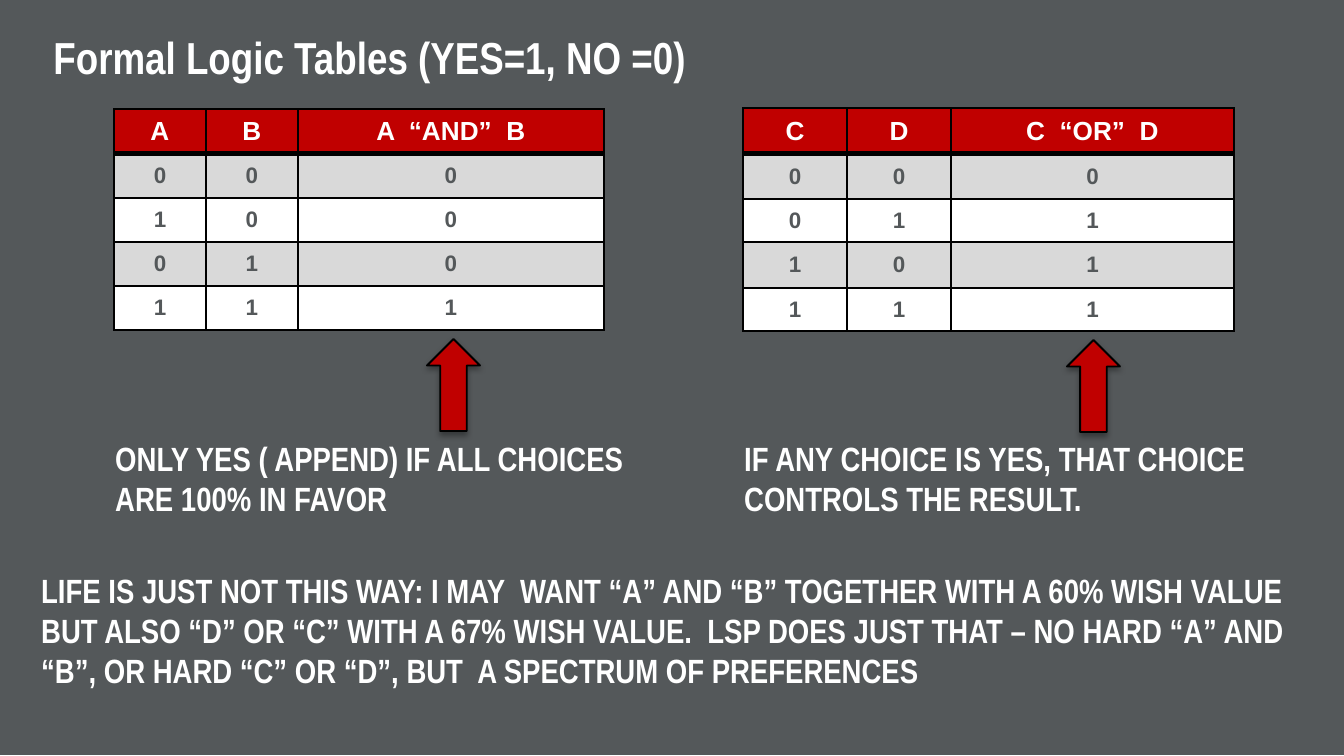
import pptx
import pptx.dml.color
import pptx.enum.shapes
import pptx.enum.text
import pptx.oxml
import pptx.oxml.ns
import pptx.util

RGB = pptx.dml.color.RGBColor
WHITE = RGB(0xFF, 0xFF, 0xFF)
BLACK = RGB(0x00, 0x00, 0x00)
SLATE = RGB(0x54, 0x58, 0x5A)
RED = RGB(0xC0, 0x00, 0x00)
GREY = RGB(0xD9, 0xD9, 0xD9)

PX = 914400 / 134.4
SHAPE = pptx.enum.shapes.MSO_SHAPE
ANCHOR = pptx.enum.text.MSO_ANCHOR
ALIGN = pptx.enum.text.PP_ALIGN
NS = pptx.oxml.ns.nsdecls("a")


def px(*lengths):
    """Turn pixel lengths into EMU."""
    return [pptx.util.Emu(round(length * PX)) for length in lengths]


def write(frame, text, size, font, color, align):
    frame.text = text
    paragraph = frame.paragraphs[0]
    paragraph.alignment = align
    look = {"size": pptx.util.Pt(size), "name": font, "bold": True}
    for attribute, value in look.items():
        setattr(paragraph.runs[0].font, attribute, value)
    paragraph.runs[0].font.color.rgb = color


deck = pptx.Presentation()
deck.slide_width, deck.slide_height = px(1344, 756)
slide = deck.slides.add_slide(deck.slide_layouts[5])
shapes = slide.shapes

title = shapes.title
title.left, title.top, title.width, title.height = px(40, 23, 667, 67)
write(title.text_frame, "Formal Logic Tables (YES=1, NO =0)", 24,
      "Arial Narrow", WHITE, ALIGN.LEFT)
title.text_frame.word_wrap = False
title.text_frame.vertical_anchor = ANCHOR.TOP
title.text_frame.auto_size = pptx.enum.text.MSO_AUTO_SIZE.NONE

backdrop = shapes.add_shape(SHAPE.RECTANGLE, *px(0, 0, 1344, 755))
backdrop.shadow.inherit = False
backdrop.fill.solid()
backdrop.fill.fore_color.rgb = SLATE
backdrop.line.fill.background()
title.element.addprevious(backdrop.element)

# Remarks: left, top, width, height, text
remarks = [
    (102, 431, 562, 95, "ONLY YES ( APPEND) IF ALL CHOICES ARE 100% IN FAVOR"),
    (731, 431, 538, 95,
     "IF ANY CHOICE IS YES, THAT CHOICE CONTROLS THE RESULT."),
    (28, 563, 1288, 136,
     "LIFE IS JUST NOT THIS WAY: I MAY  WANT “A” AND “B” TOGETHER WITH A 60% "
     "WISH VALUE  BUT ALSO “D” OR “C” WITH A 67% WISH VALUE.  LSP DOES JUST "
     "THAT – NO HARD “A” AND “B”, OR HARD “C” OR “D”, BUT  A SPECTRUM OF "
     "PREFERENCES"),
]
for *place, text in remarks:
    remark = shapes.add_textbox(*px(*place))
    remark.text_frame.word_wrap = True
    write(remark.text_frame, text, 18, "Arial Narrow", WHITE, ALIGN.LEFT)

# Truth tables: left, top, column widths, row heights, rows
truth_tables = [
    (114, 109, (92, 92, 306), (44, 44, 44, 44, 44),
     [("A", "B", "A  “AND”  B"), "000", "100", "010", "111"]),
    (743, 108, (104, 104, 283), (46, 45, 43, 46, 43),
     [("C", "D", "C  “OR”  D"), "000", "011", "101", "111"]),
]
for left, top, widths, heights, rows in truth_tables:
    table = shapes.add_table(
        len(rows), len(widths),
        *px(left, top, sum(widths), sum(heights))).table
    for column, width in zip(table.columns, px(*widths)):
        column.width = width
    for row, height in zip(table.rows, px(*heights)):
        row.height = height
    for r, values in enumerate(rows):
        header = r == 0
        for c, value in enumerate(values):
            cell = table.cell(r, c)
            write(cell.text_frame, value, 14 if header else 12, "Arial",
                  WHITE if header else SLATE, ALIGN.CENTER)
            cell.vertical_anchor = ANCHOR.MIDDLE
            borders = {"L": 1, "R": 1, "T": 3 if r == 1 else 1,
                       "B": 3 if header else 1}
            for side, points in borders.items():
                cell._tc.get_or_add_tcPr().append(pptx.oxml.parse_xml(
                    f'<a:ln{side} {NS} w="{points * 12700}"><a:solidFill>'
                    f'<a:srgbClr val="{BLACK}"/></a:solidFill></a:ln{side}>'))
            cell.fill.solid()
            cell.fill.fore_color.rgb = RED if header else (WHITE, GREY)[r % 2]

for left, top in [(427, 339), (1067, 340)]:
    arrow = shapes.add_shape(SHAPE.UP_ARROW, *px(left, top, 53, 92))
    arrow.fill.solid()
    arrow.fill.fore_color.rgb = RED
    arrow.line.color.rgb = BLACK
    arrow.line.width = pptx.util.Pt(1)
    arrow.shadow.inherit = False
    effects = arrow.element.spPr.find(pptx.oxml.ns.qn("a:effectLst"))
    effects.append(pptx.oxml.parse_xml(
        f'<a:outerShdw {NS} blurRad="39370" dist="22860" dir="5400000" '
        f'rotWithShape="0"><a:srgbClr val="{BLACK}"><a:alpha val="35000"/>'
        '</a:srgbClr></a:outerShdw>'))

deck.save("out.pptx")
